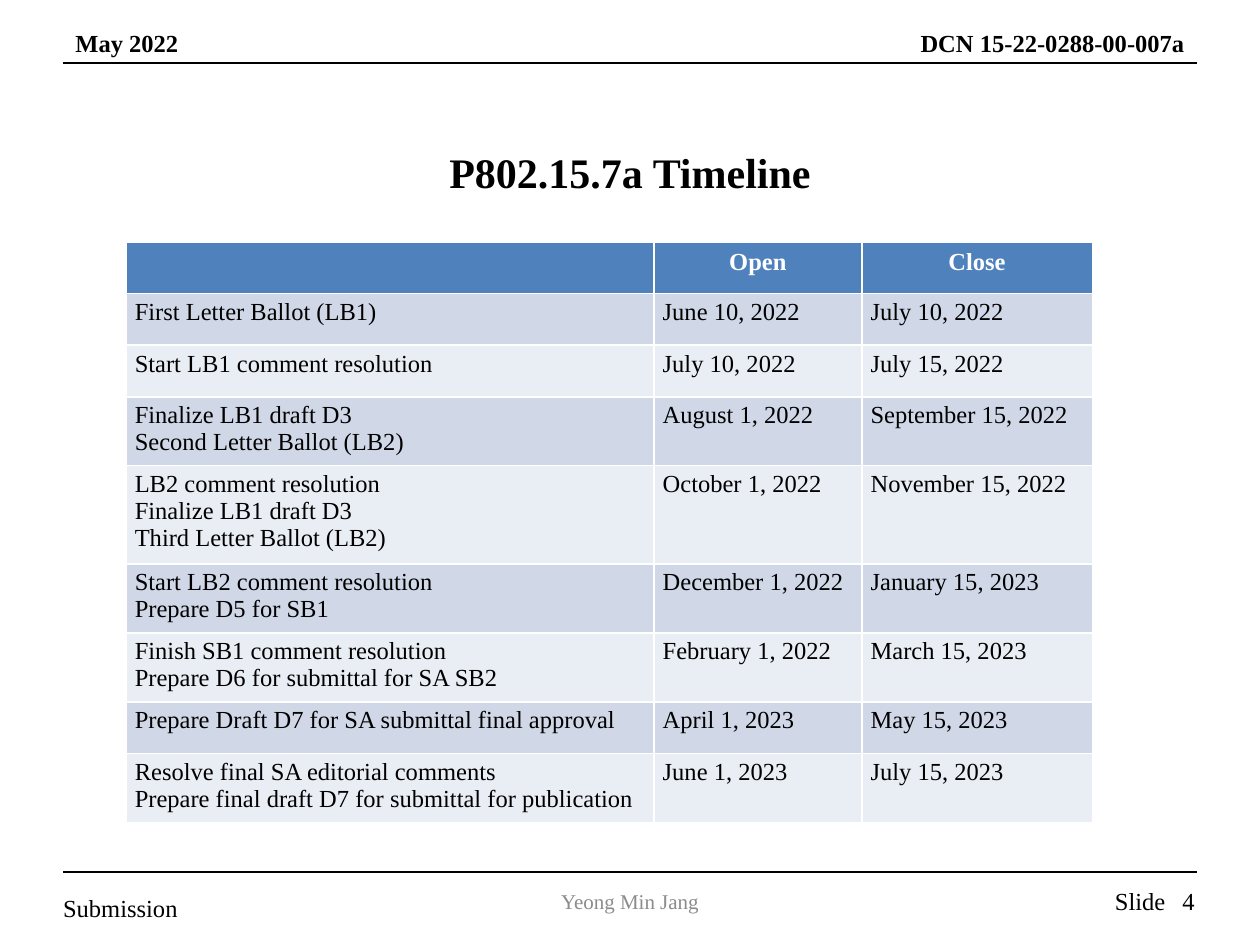
from lxml.etree import SubElement
from pptx import Presentation
from pptx.dml.color import RGBColor
from pptx.enum.shapes import MSO_CONNECTOR as Connector
from pptx.enum.text import MSO_ANCHOR as Anchor, PP_ALIGN as Align
from pptx.oxml.ns import qn
from pptx.util import Inches, Pt

FONT = "Times New Roman"
BLACK, WHITE, GRAY, BLUE = "000000", "FFFFFF", "8C8C8C", "4F81BD"
BANDS = ("D0D8E8", "E9EDF4")
COLUMN_WIDTHS = (4.19, 1.65, 1.83)
ROW_HEIGHT = 0.41
HEADINGS = ("", "Open", "Close")
TIMELINE = (
    ("First Letter Ballot (LB1)", "June 10, 2022", "July 10, 2022"),
    ("Start LB1 comment resolution", "July 10, 2022", "July 15, 2022"),
    ("Finalize LB1 draft D3\nSecond Letter Ballot (LB2)", "August 1, 2022", "September 15, 2022"),
    ("LB2 comment resolution\nFinalize LB1 draft D3\nThird Letter Ballot (LB2)",
     "October 1, 2022", "November 15, 2022"),
    ("Start LB2 comment resolution\nPrepare D5 for SB1", "December 1, 2022", "January 15, 2023"),
    ("Finish SB1 comment resolution\nPrepare D6 for submittal for SA SB2",
     "February 1, 2022", "March 15, 2023"),
    ("Prepare Draft D7 for SA submittal final approval", "April 1, 2023", "May 15, 2023"),
    ("Resolve final SA editorial comments\nPrepare final draft D7 for submittal for publication",
     "June 1, 2023", "July 15, 2023"),
)


def color(value):
    return RGBColor.from_string(value)


class SlideBuilder:
    """Hold the text style and the current slide, and add elements to it."""

    def __init__(self, slide, font=FONT):
        self.slide = slide
        self.font = font

    def set_text(self, frame, text, size=14, ink=BLACK, bold=False, align=Align.LEFT):
        frame.text = text
        for paragraph in frame.paragraphs:
            paragraph.alignment = align
            paragraph.font.name = self.font
            paragraph.font.size = Pt(size)
            paragraph.font.bold = bold
            paragraph.font.color.rgb = color(ink)

    def set_margins(self, target, horizontal, vertical):
        target.margin_left = target.margin_right = Inches(horizontal)
        target.margin_top = target.margin_bottom = Inches(vertical)

    def title(self, text, left, top, width, height):
        shape = self.slide.shapes.title
        shape.left, shape.top = Inches(left), Inches(top)
        shape.width, shape.height = Inches(width), Inches(height)
        frame = shape.text_frame
        frame.vertical_anchor = Anchor.MIDDLE
        self.set_margins(frame, 0.08, 0.04)
        self.set_text(frame, text, 24, bold=True, align=Align.CENTER)

    def label(self, text, left, top, width, height, anchor=Anchor.TOP,
              margins=(0.1, 0.05), wrap=True, **style):
        box = self.slide.shapes.add_textbox(
            Inches(left), Inches(top), Inches(width), Inches(height))
        frame = box.text_frame
        frame.word_wrap = wrap
        frame.vertical_anchor = anchor
        self.set_margins(frame, *margins)
        self.set_text(frame, text, **style)

    def rule(self, top, left=0.5, right=9.5):
        line = self.slide.shapes.add_connector(
            Connector.STRAIGHT, Inches(left), Inches(top), Inches(right), Inches(top))
        line.line.color.rgb = color(BLACK)
        line.line.width = Pt(0.75)
        SubElement(line._element.spPr, qn("a:effectLst"))

    def cell(self, cell, text, fill, **style):
        cell.fill.solid()
        cell.fill.fore_color.rgb = color(fill)
        self.set_text(cell.text_frame, text, **style)

    def table(self, headings, rows, left, top):
        row_count = len(rows) + 1
        table = self.slide.shapes.add_table(
            row_count, len(headings), Inches(left), Inches(top),
            Inches(sum(COLUMN_WIDTHS)), Inches(ROW_HEIGHT * row_count)).table
        for column, width in zip(table.columns, COLUMN_WIDTHS):
            column.width = Inches(width)
        for row in table.rows:
            row.height = Inches(ROW_HEIGHT)
        for column, heading in enumerate(headings):
            self.cell(table.cell(0, column), heading, BLUE,
                      ink=WHITE, bold=True, align=Align.CENTER)
        for row, texts in enumerate(rows, 1):
            for column, text in enumerate(texts):
                cell = table.cell(row, column)
                self.set_margins(cell, 0.07, 0.04)
                self.cell(cell, text, BANDS[(row - 1) % 2])


def main():
    presentation = Presentation()
    presentation.slide_width, presentation.slide_height = Inches(10), Inches(7.5)
    builder = SlideBuilder(presentation.slides.add_slide(presentation.slide_layouts[5]))

    builder.label("Slide", 8.75, 6.98, 0.61, 0.34, wrap=False)
    builder.label("4", 9.08, 6.95, 0.5, 0.4, anchor=Anchor.MIDDLE, align=Align.RIGHT)
    builder.label("Yeong Min Jang", 3.31, 6.95, 3.38, 0.4, anchor=Anchor.MIDDLE,
                  size=12, ink=GRAY, align=Align.CENTER)
    builder.label("Submission", 0.5, 7.08, 1.75, 0.24, anchor=Anchor.BOTTOM, margins=(0, 0))
    for top in (0.5, 6.92):
        builder.rule(top)
    builder.label("May 2022", 0.5, 0.17, 1.67, 0.34, bold=True)
    builder.label("DCN 15-22-0288-00-007a", 5.92, 0.17, 3.58, 0.34, bold=True, align=Align.RIGHT)

    builder.title("P802.15.7a Timeline", 0.75, 0.93, 8.5, 0.87)
    builder.table(HEADINGS, TIMELINE, 1, 1.92)
    presentation.save("out.pptx")


if __name__ == "__main__":
    main()
